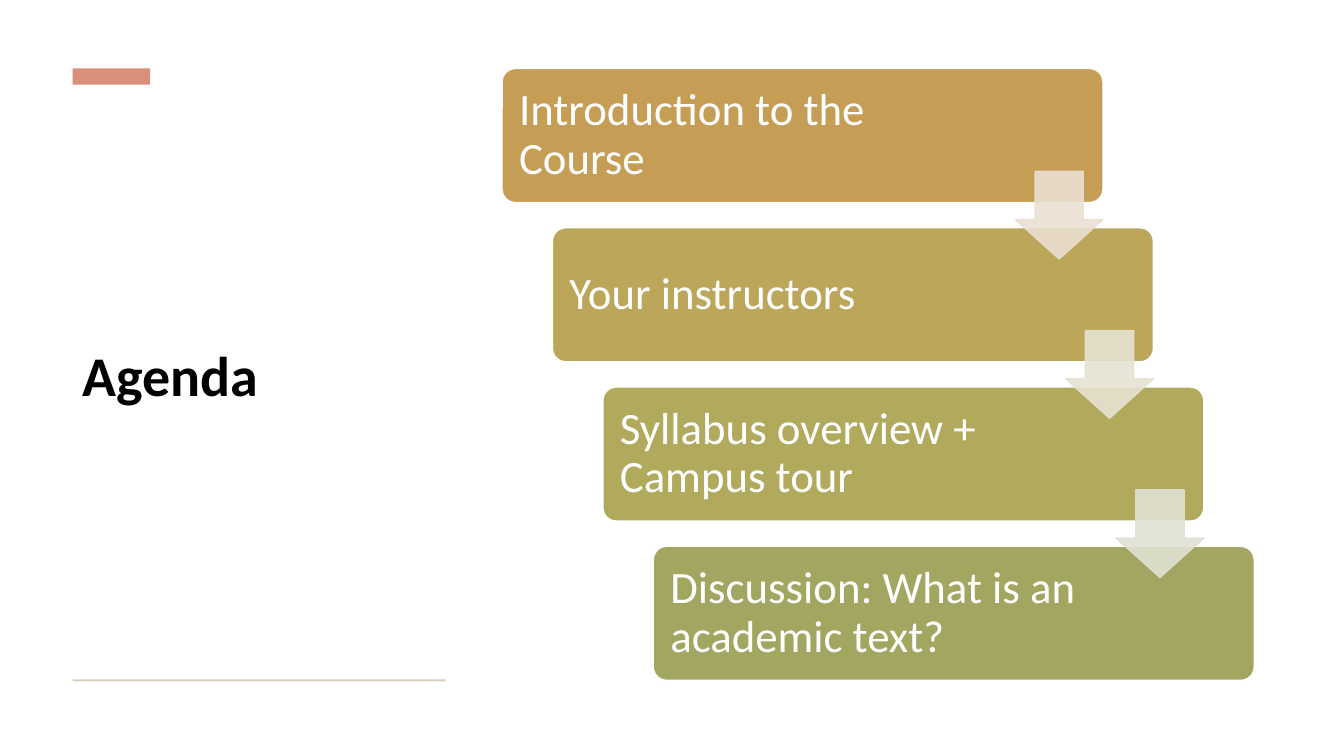
from dataclasses import dataclass

from lxml import etree
from pptx import Presentation
from pptx import util as u
from pptx.dml.color import RGBColor
from pptx.enum import shapes, text
from pptx.oxml import ns

COLORS = {
    "title": "000000",
    "white": "FFFFFF",
    "accent": "DA8F7A",
    "rule": "DACFBD",
}
FONT = "Calibri"
STEP_LEFT, STEP_TOP = 4.98, 0.68
STEP_WIDTH, STEP_HEIGHT = 5.96, 1.33
SHIFT_X, SHIFT_Y = 0.5, 1.58
ARROW_LEFT, ARROW_TOP, ARROW_SIZE = 10.07, 1.7, 0.87


@dataclass
class Step:
    """One stair of the agenda and the colour of the arrow leaving it."""
    label: str
    fill: str
    arrow: str = ""


STEPS = [
    Step("Introduction to the Course", "C59D55", "EADFD1"),
    Step("Your instructors", "BBA659", "E6E2D2"),
    Step("Syllabus overview + Campus tour", "B1AA5D", "E0E1D3"),
    Step("Discussion: What is an academic text?", "A2A661"),
]


def add_block(slide, kind, box: tuple, fill: str, line: str = "", adjustments: tuple = ()):
    """Add a flat filled shape, outlined at one point if a line colour is given."""
    sp = slide.shapes.add_shape(kind, *(u.Inches(v) for v in box))
    sp.shadow.inherit = False
    sp.fill.solid()
    sp.fill.fore_color.rgb = RGBColor.from_string(fill)
    if line:
        sp.line.color.rgb = RGBColor.from_string(line)
        sp.line.width = u.Pt(1)
    else:
        sp.line.fill.background()
    for i, value in enumerate(adjustments):
        sp.adjustments[i] = value
    return sp


def set_text(tf, label: str, size: int, color: str, bold: bool = False) -> None:
    """Write one left-aligned, vertically centred paragraph."""
    tf.word_wrap = True
    tf.auto_size = text.MSO_AUTO_SIZE.NONE
    tf.vertical_anchor = text.MSO_ANCHOR.MIDDLE
    p = tf.paragraphs[0]
    p.alignment = text.PP_ALIGN.LEFT
    p.line_spacing = 0.9
    r = p.add_run()
    r.text = label
    r.font.name = FONT
    r.font.size = u.Pt(size)
    r.font.bold = bold
    r.font.color.rgb = RGBColor.from_string(color)


def set_opacity(sp, percent: int) -> None:
    """Apply one opacity to the fill and line of a shape."""
    for clr in sp._element.spPr.iter(ns.qn("a:srgbClr")):
        etree.SubElement(clr, ns.qn("a:alpha")).set("val", str(percent * 1000))


def add_step(slide, index: int, step: Step) -> None:
    """Draw one stair of the agenda with its label."""
    box = (STEP_LEFT + index * SHIFT_X, STEP_TOP + index * SHIFT_Y, STEP_WIDTH, STEP_HEIGHT)
    sp = add_block(slide, shapes.MSO_SHAPE.ROUNDED_RECTANGLE, box, step.fill,
                   COLORS["white"], (0.1,))
    tf = sp.text_frame
    tf.margin_left, tf.margin_right = u.Inches(0.13), u.Inches(1.53)
    set_text(tf, step.label, 32, COLORS["white"])


def add_arrow(slide, index: int, step: Step) -> None:
    """Draw the arrow leading from one stair to the next."""
    box = (ARROW_LEFT + index * SHIFT_X, ARROW_TOP + index * SHIFT_Y, ARROW_SIZE, ARROW_SIZE)
    sp = add_block(slide, shapes.MSO_SHAPE.DOWN_ARROW, box, step.arrow, step.arrow, (0.55, 0.45))
    set_opacity(sp, 90)


def main() -> None:
    """Build the agenda slide and save it."""
    prs = Presentation()
    prs.slide_width, prs.slide_height = u.Inches(13.33), u.Inches(7.5)
    slide = prs.slides.add_slide(prs.slide_layouts[5])

    title = slide.shapes.title
    title.left, title.top = u.Inches(0.72), u.Inches(1.05)
    title.width, title.height = u.Inches(3.7), u.Inches(5.41)
    set_text(title.text_frame, "Agenda", 40, COLORS["title"], bold=True)

    rect = shapes.MSO_SHAPE.RECTANGLE
    add_block(slide, rect, (0.72, 0.68, 0.77, 0.16), COLORS["accent"])
    add_block(slide, rect, (0.72, 6.74, 3.7, 0.02), COLORS["rule"])

    for i, step in enumerate(STEPS):
        add_step(slide, i, step)
    for i, step in enumerate(STEPS[:-1]):
        add_arrow(slide, i, step)

    prs.save("out.pptx")


if __name__ == "__main__":
    main()
